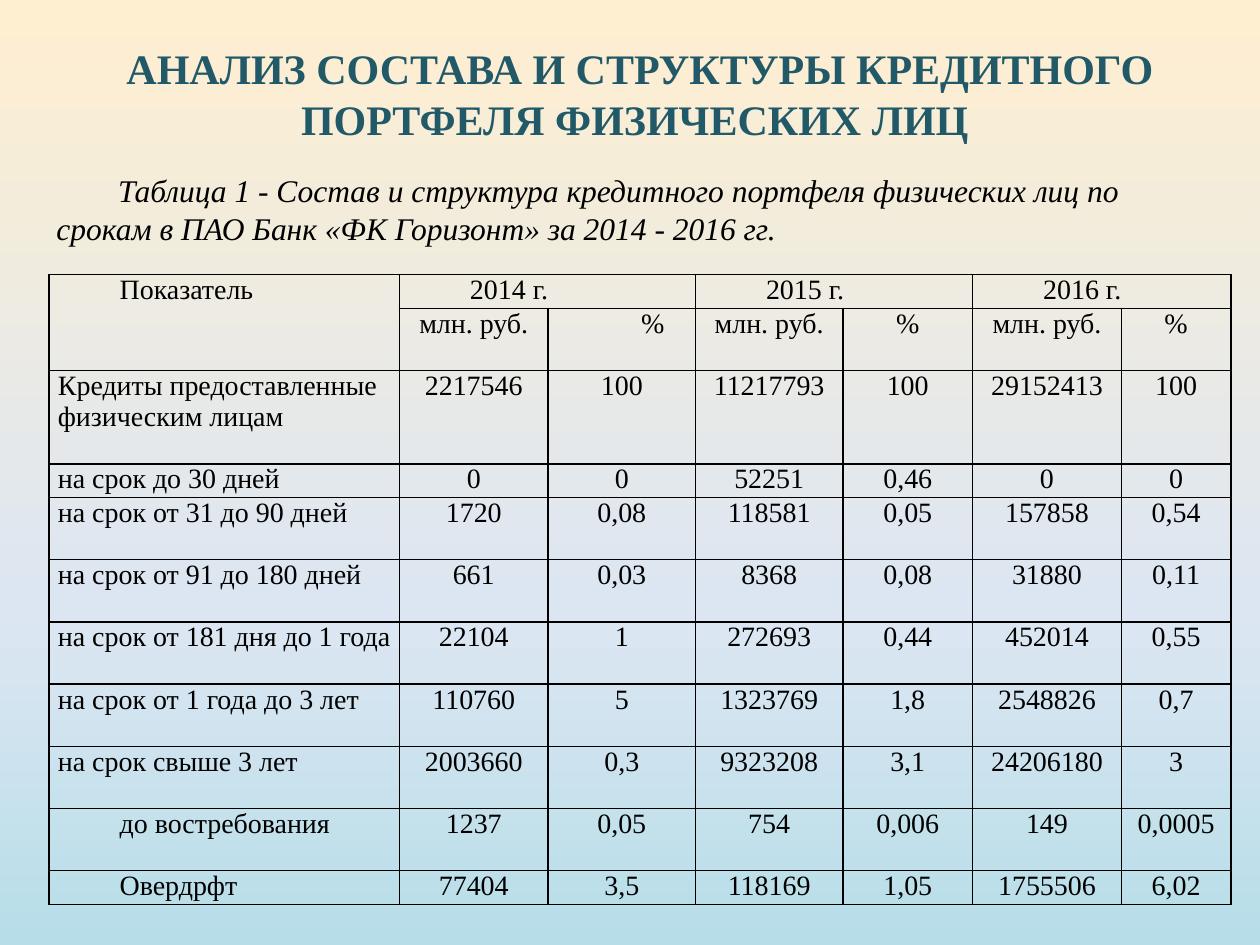
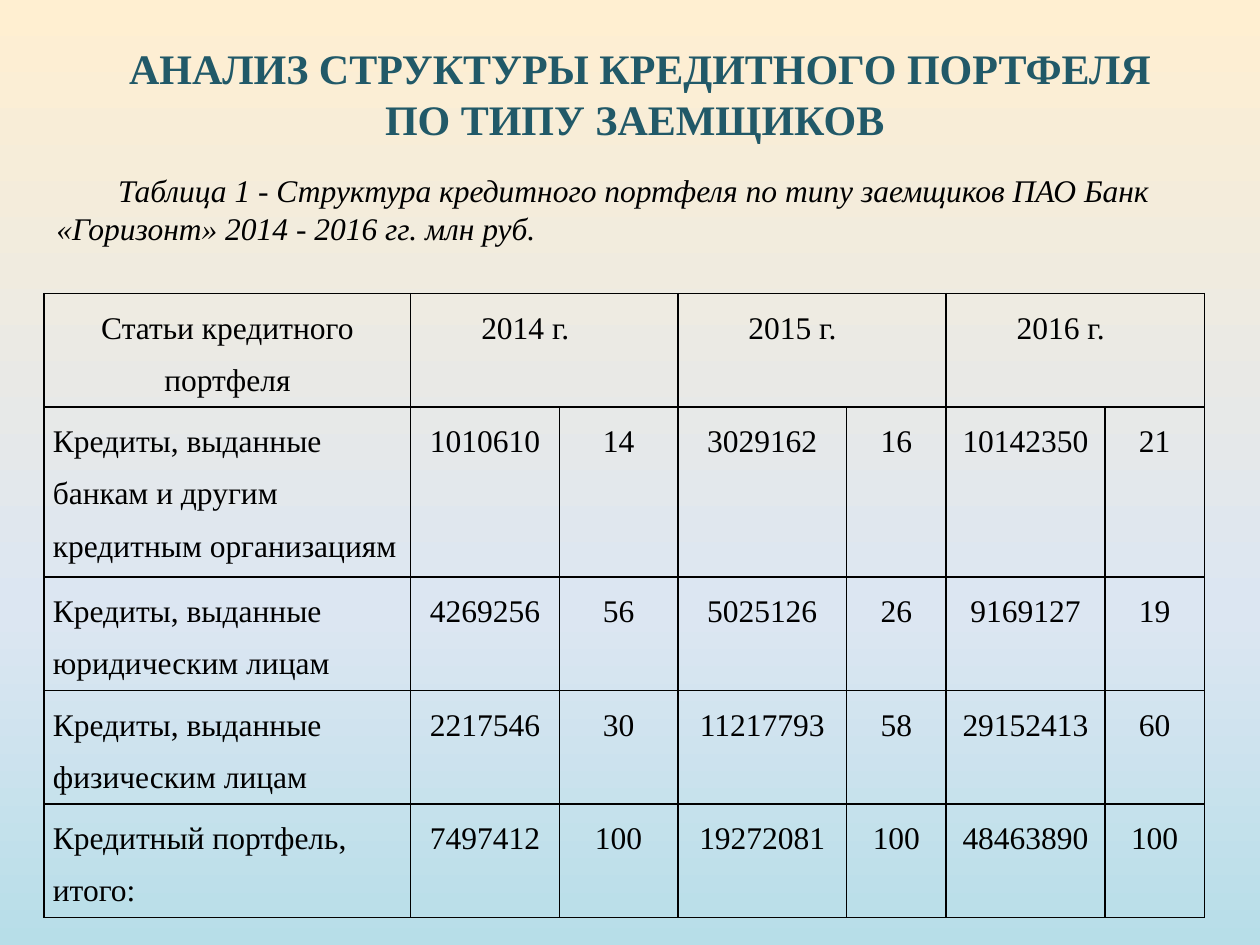
from copy import deepcopy
from dataclasses import dataclass

from pptx import Presentation
from pptx.dml.color import RGBColor
from pptx.enum.text import MSO_ANCHOR, PP_ALIGN
from pptx.oxml import parse_xml
from pptx.oxml.ns import nsdecls, qn
from pptx.util import Emu, Inches, Pt


@dataclass(frozen=True)
class Theme:
    font: str = "Times New Roman"
    ink: str = "000000"
    accent: str = "215968"
    sky: tuple = ((0, "FFEFD1"), (65, "DCE6F2"), (100, "B7DEE8"))
    title: int = 24
    note: int = 18
    rule: int = 1


THEME = Theme()

# The slide is a grid of 100 columns by 75 rows.
COLS, ROWS = 100, 75
WIDTH, HEIGHT = Inches(10), Inches(7.5)
CELL = WIDTH / COLS
INDENT = 4.9
PAD = 0.7

# Boxes: left, top, width, height in grid units.
TITLE_BOX = (6.7, 2.9, 88.2, 9.1)
NOTE_BOX = (3.5, 13.1, 91.3, 7.1)


@dataclass(frozen=True)
class Grid:
    """Table content: cols in grid units, lines of text per row."""
    box: tuple
    cols: tuple
    lines: tuple
    rows: tuple
    size: int
    space: float
    merges: tuple
    indents: tuple
    centred: tuple = ()


YEARS = ("2014 г.", None, "2015 г.", None, "2016 г.", None)
PAIRS = tuple(((0, c), (0, c + 1)) for c in (1, 3, 5))
HEADS = ((0, 1), (0, 3), (0, 5))

TERMS = Grid(
    box=(3.9, 21.8, 93.8, 49.4),
    cols=(27.8, 11.8, 11.7, 11.7, 10.3, 11.8, 8.7),
    lines=(1, 2, 3, 1, 2, 2, 2, 2, 2, 2, 1),
    rows=(
        ("Показатель", *YEARS),
        (None, *("млн. руб.", "%") * 3),
        ("Кредиты предоставленные физическим лицам",
         "2217546", "100", "11217793", "100", "29152413", "100"),
        ("на срок до 30 дней", "0", "0", "52251", "0,46", "0", "0"),
        ("на срок от 31 до 90 дней",
         "1720", "0,08", "118581", "0,05", "157858", "0,54"),
        ("на срок от 91 до 180 дней",
         "661", "0,03", "8368", "0,08", "31880", "0,11"),
        ("на срок от 181 дня до 1 года",
         "22104", "1", "272693", "0,44", "452014", "0,55"),
        ("на срок от 1 года до 3 лет",
         "110760", "5", "1323769", "1,8", "2548826", "0,7"),
        ("на срок свыше 3 лет",
         "2003660", "0,3", "9323208", "3,1", "24206180", "3"),
        ("до востребования",
         "1237", "0,05", "754", "0,006", "149", "0,0005"),
        ("Овердрфт", "77404", "3,5", "118169", "1,05", "1755506", "6,02"),
    ),
    size=16,
    space=1.0,
    merges=(((0, 0), (1, 0)), *PAIRS),
    indents=((0, 0), *HEADS, (1, 2), (9, 0), (10, 0)),
)

TYPES = Grid(
    box=(3.5, 23.3, 92.1, 49.5),
    cols=(29.1, 11.8, 9.4, 13.4, 7.9, 12.6, 7.9),
    lines=(2, 3, 2, 2, 2),
    rows=(
        ("Статьи кредитного портфеля", *YEARS),
        ("Кредиты, выданные банкам и другим кредитным организациям",
         "1010610", "14", "3029162", "16", "10142350", "21"),
        ("Кредиты, выданные юридическим лицам",
         "4269256", "56", "5025126", "26", "9169127", "19"),
        ("Кредиты, выданные физическим лицам",
         "2217546", "30", "11217793", "58", "29152413", "60"),
        ("Кредитный портфель, итого:",
         "7497412", "100", "19272081", "100", "48463890", "100"),
    ),
    size=18,
    space=1.5,
    merges=PAIRS,
    indents=HEADS,
    centred=((0, 0),),
)


def span(units):
    return Emu(round(units * CELL))


def place(box):
    return [span(n) for n in box]


def write(para, text, size, color=THEME.ink, bold=False, italic=False):
    run = para.add_run()
    run.text = text
    font = run.font
    font.name, font.size = THEME.font, Pt(size)
    font.bold, font.italic = bold, italic
    font.color.rgb = RGBColor.from_string(color)


def indent(para):
    props = para._p.get_or_add_pPr()
    props.set("marL", "0")
    props.set("indent", str(span(INDENT)))


def paint(master):
    """Give every slide the vertical gradient of the theme."""
    fill = master.background.fill
    fill.gradient()
    fill.gradient_angle = 270
    stops = next(master.element.iter(qn("a:gsLst")))
    for old in list(stops):
        stops.remove(old)
    for pos, color in THEME.sky:
        stops.append(parse_xml(
            f'<a:gs {nsdecls("a")} pos="{pos * 1000}">'
            f'<a:srgbClr val="{color}"/></a:gs>'))


def head(slide, box, text):
    shape = slide.shapes.title
    shape.left, shape.top, shape.width, shape.height = place(box)
    frame = shape.text_frame
    frame.vertical_anchor = MSO_ANCHOR.TOP
    para = frame.paragraphs[0]
    para.alignment = PP_ALIGN.CENTER
    write(para, text, THEME.title, THEME.accent, bold=True)


def note(slide, box, text):
    frame = slide.shapes.add_textbox(*place(box)).text_frame
    frame.word_wrap = True
    para = frame.paragraphs[0]
    para.space_after = Pt(10)
    indent(para)
    write(para, text, THEME.note, italic=True)


def rule(cell):
    """Draw the four borders of a cell and leave it unfilled."""
    cell.fill.background()
    props = cell._tc.get_or_add_tcPr()
    for spot, side in enumerate("LRTB"):
        line = parse_xml(
            f'<a:ln{side} {nsdecls("a")} w="{Pt(THEME.rule)}">'
            f'<a:solidFill><a:srgbClr val="{THEME.ink}"/></a:solidFill>'
            f'</a:ln{side}>')
        props.insert(spot, deepcopy(line))


def fill(cell, spot, text, grid):
    cell.margin_left = cell.margin_right = span(PAD)
    cell.margin_top = cell.margin_bottom = 0
    rule(cell)
    if text is None:
        return
    row, col = spot
    para = cell.text_frame.paragraphs[0]
    para.line_spacing = grid.space
    if spot in grid.centred or (row and col):
        para.alignment = PP_ALIGN.CENTER
    if spot in grid.indents:
        indent(para)
    write(para, text, grid.size)


def chart(slide, grid):
    """Place a ruled table whose rows share the box by lines of text."""
    table = slide.shapes.add_table(
        len(grid.rows), len(grid.cols), *place(grid.box)).table
    table.first_row = table.horz_banding = False
    for col, width in zip(table.columns, grid.cols):
        col.width = span(width)
    unit = grid.box[3] / sum(grid.lines)
    for row, lines in zip(table.rows, grid.lines):
        row.height = span(lines * unit)
    for start, end in grid.merges:
        table.cell(*start).merge(table.cell(*end))
    for r, row in enumerate(grid.rows):
        for c, text in enumerate(row):
            fill(table.cell(r, c), (r, c), text, grid)


def page(deck, title, caption, grid):
    slide = deck.slides.add_slide(deck.slide_layouts.get_by_name("Title Only"))
    head(slide, TITLE_BOX, title)
    note(slide, NOTE_BOX, caption)
    chart(slide, grid)


def main():
    deck = Presentation()
    deck.slide_width, deck.slide_height = WIDTH, HEIGHT
    paint(deck.slide_master)
    page(deck,
         "АНАЛИЗ СОСТАВА И СТРУКТУРЫ КРЕДИТНОГО ПОРТФЕЛЯ ФИЗИЧЕСКИХ ЛИЦ ",
         "Таблица 1 - Состав и структура кредитного портфеля физических лиц "
         "по срокам в ПАО Банк «ФК Горизонт» за 2014 - 2016 гг.",
         TERMS)
    page(deck,
         "АНАЛИЗ СТРУКТУРЫ КРЕДИТНОГО ПОРТФЕЛЯ ПО ТИПУ ЗАЕМЩИКОВ ",
         "Таблица 1 - Структура кредитного портфеля по типу заемщиков "
         "ПАО Банк «Горизонт» 2014 - 2016 гг. млн руб.",
         TYPES)
    deck.save("out.pptx")


if __name__ == "__main__":
    main()
